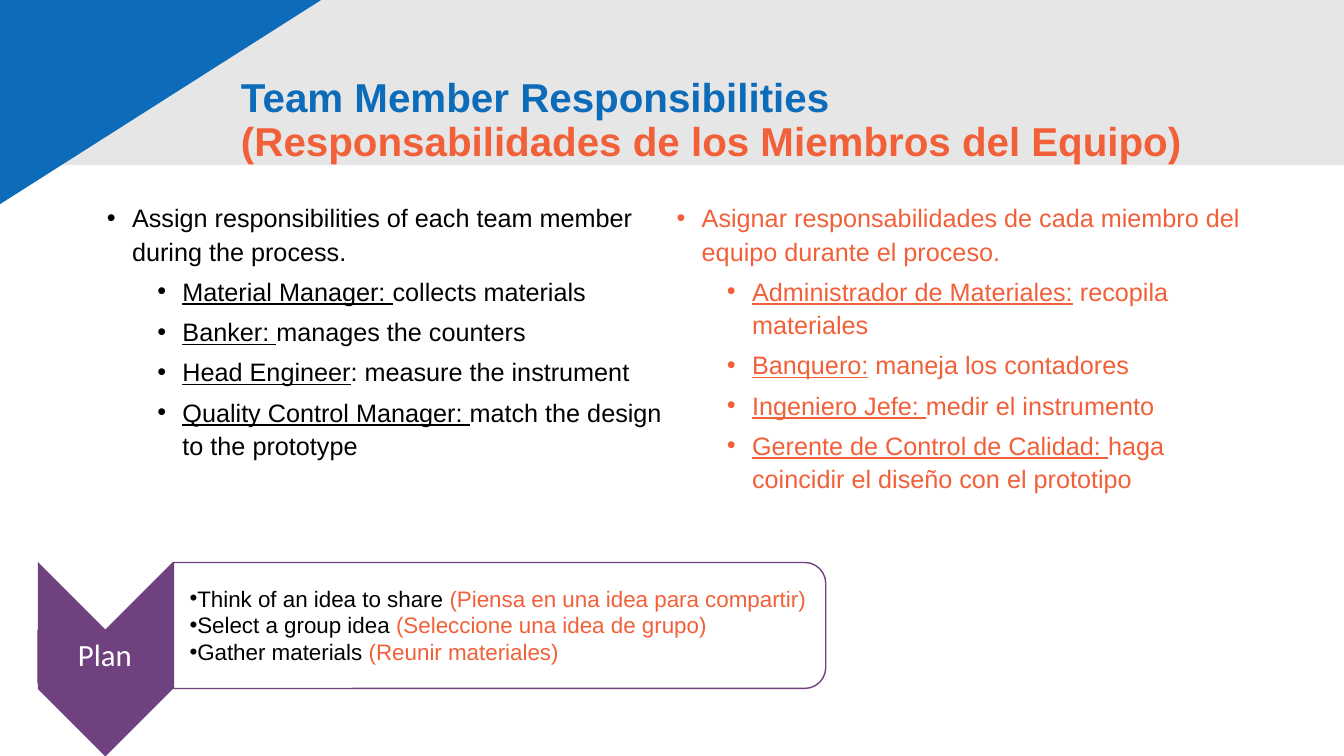
from dataclasses import dataclass

from lxml import etree
from pptx import Presentation
from pptx.dml.color import RGBColor
from pptx.enum.shapes import MSO_SHAPE
from pptx.enum.text import MSO_ANCHOR, MSO_AUTO_SIZE, PP_ALIGN
from pptx.oxml.ns import qn
from pptx.util import Inches, Pt

RECT, TRIANGLE = MSO_SHAPE.RECTANGLE, MSO_SHAPE.RIGHT_TRIANGLE
CHEVRON, ROUND_TOP = MSO_SHAPE.CHEVRON, MSO_SHAPE.ROUND_2_SAME_RECTANGLE
TOP, MIDDLE = MSO_ANCHOR.TOP, MSO_ANCHOR.MIDDLE
LEFT, CENTER = PP_ALIGN.LEFT, PP_ALIGN.CENTER
NO_AUTOFIT = MSO_AUTO_SIZE.NONE
TWO_CONTENT = 3


@dataclass(frozen=True)
class Theme:
    font: str = "Arial"
    label_font: str = "Calibri"
    title_size: float = 28.8
    body_size: float = 18
    label_size: float = 22
    step_size: float = 16
    blue: str = "0D6CB9"
    orange: str = "F16038"
    purple: str = "70417F"
    grey: str = "E7E6E6"
    black: str = "000000"
    white: str = "FFFFFF"


@dataclass(frozen=True)
class Box:
    left: float
    top: float
    width: float
    height: float

    def emu(self):
        return [Inches(v) for v in (self.left, self.top, self.width, self.height)]


@dataclass(frozen=True)
class Column:
    color: str
    intro: str
    roles: tuple


THEME = Theme()

COLUMNS = (
    Column(THEME.black, "Assign responsibilities of each team member during the process.", (
        ("Material Manager: ", "collects materials"),
        ("Banker: ", "manages the counters"),
        ("Head Engineer", ": measure the instrument"),
        ("Quality Control Manager: ", "match the design to the prototype"),
    )),
    Column(THEME.orange, "Asignar responsabilidades de cada miembro del equipo durante el proceso.", (
        ("Administrador de Materiales:", " recopila materiales"),
        ("Banquero:", " maneja los contadores"),
        ("Ingeniero Jefe: ", "medir el instrumento"),
        ("Gerente de Control de Calidad: ", "haga coincidir el diseño con el prototipo"),
    )),
)

STEPS = (
    ("Think of an idea to share ", "(Piensa en una idea para compartir)"),
    ("Select a group idea ", "(Seleccione una idea de grupo)"),
    ("Gather materials ", "(Reunir materiales)"),
)


def add_shape(shapes, kind, box: Box, fill: str = "", line: str = "", rotation: float = 0):
    sp = shapes.add_shape(kind, *box.emu())
    sp.shadow.inherit = False
    sp.rotation = rotation
    if fill:
        sp.fill.solid()
        sp.fill.fore_color.rgb = RGBColor.from_string(fill)
    else:
        sp.fill.background()
    if line:
        sp.line.color.rgb = RGBColor.from_string(line)
        sp.line.width = Pt(1)
    else:
        sp.line.fill.background()
    return sp


def place(sp, box: Box) -> None:
    sp.left, sp.top, sp.width, sp.height = box.emu()


def setup_frame(tf, anchor, margins: tuple = (0.1, 0.05, 0.1, 0.05)) -> None:
    tf.word_wrap = True
    tf.auto_size = NO_AUTOFIT
    tf.vertical_anchor = anchor
    tf.margin_left, tf.margin_top, tf.margin_right, tf.margin_bottom = map(Inches, margins)


def add_run(p, text: str, size: float, color: str, font: str = THEME.font,
            bold: bool = False, underline: bool = False) -> None:
    r = p.add_run()
    r.text = text
    r.font.name = font
    r.font.size = Pt(size)
    r.font.color.rgb = RGBColor.from_string(color)
    r.font.bold = bold
    r.font.underline = underline


def set_bullet(p, margin: float, indent: float) -> None:
    pPr = p._p.get_or_add_pPr()
    pPr.set("marL", str(Inches(margin)))
    pPr.set("indent", str(Inches(indent)))
    etree.SubElement(pPr, qn("a:buFont")).set("typeface", THEME.font)
    etree.SubElement(pPr, qn("a:buChar")).set("char", "•")


def next_paragraph(tf, index: int):
    return tf.add_paragraph() if index else tf.paragraphs[0]


def draw_backdrop(s) -> None:
    band = add_shape(s.shapes, RECT, Box(-0.26, -0.19, 13.59, 1.83), THEME.grey)
    corner = add_shape(s.shapes, TRIANGLE, Box(-2.57, -1.72, 8.46, 5.38), THEME.blue, rotation=180)
    corner._element.spPr.find(qn("a:xfrm")).set("flipH", "1")
    # Behind the placeholders
    for position, sp in enumerate((band, corner), start=2):
        s.shapes._spTree.insert(position, sp._element)


def draw_title(s) -> None:
    title = s.shapes.title
    place(title, Box(2.29, 0.48, 9.7, 1.45))
    setup_frame(title.text_frame, MIDDLE)
    p = title.text_frame.paragraphs[0]
    p.alignment = LEFT
    p.line_spacing = 0.9
    add_run(p, "Team Member Responsibilities", THEME.title_size, THEME.blue, bold=True)
    p.add_line_break()
    add_run(p, "(Responsabilidades de los Miembros del Equipo)", THEME.title_size,
            THEME.orange, bold=True)


def draw_column(sp, column: Column, box: Box) -> None:
    place(sp, box)
    tf = sp.text_frame
    setup_frame(tf, TOP)
    for i, (name, task) in enumerate((("", column.intro), *column.roles)):
        p = next_paragraph(tf, i)
        p.level = 1 if name else 0
        set_bullet(p, 0.75 if name else 0.25, -0.25)
        p.line_spacing = 1.1
        p.space_before = Pt(5 if i else 0)
        if name:
            add_run(p, name, THEME.body_size, column.color, underline=True)
        add_run(p, task, THEME.body_size, column.color)


def draw_plan(s) -> None:
    shapes = s.shapes.add_group_shape().shapes
    add_shape(shapes, CHEVRON, Box(0.08, 5.87, 1.93, 1.34), THEME.purple, rotation=90)

    label = add_shape(shapes, RECT, Box(0.37, 6.25, 1.34, 0.53), THEME.purple)
    setup_frame(label.text_frame, MIDDLE, (0.02,) * 4)
    p = label.text_frame.paragraphs[0]
    p.alignment = CENTER
    p.line_spacing = 0.9
    add_run(p, "Plan", THEME.label_size, THEME.white, THEME.label_font)

    add_shape(shapes, ROUND_TOP, Box(4.33, 2.97, 1.25, 6.47), line=THEME.purple, rotation=90)
    tf = shapes.add_textbox(*Box(1.76, 5.43, 6.7, 1.54).emu()).text_frame
    setup_frame(tf, MIDDLE, (0.12, 0.01, 0.01, 0.01))
    for i, (english, spanish) in enumerate(STEPS):
        p = next_paragraph(tf, i)
        set_bullet(p, 0, 0)
        add_run(p, english, THEME.step_size, THEME.black)
        add_run(p, spanish, THEME.step_size, THEME.orange)


def main() -> None:
    prs = Presentation()
    prs.slide_width, prs.slide_height = Inches(13.33), Inches(7.5)
    s = prs.slides.add_slide(prs.slide_layouts[TWO_CONTENT])
    draw_backdrop(s)
    draw_title(s)
    # English and Spanish columns
    for i, column in enumerate(COLUMNS):
        draw_column(s.placeholders[i + 1], column, Box(0.96 + i * 5.65, 1.93, 5.85, 3.3))
    draw_plan(s)
    prs.save("out.pptx")


if __name__ == "__main__":
    main()
